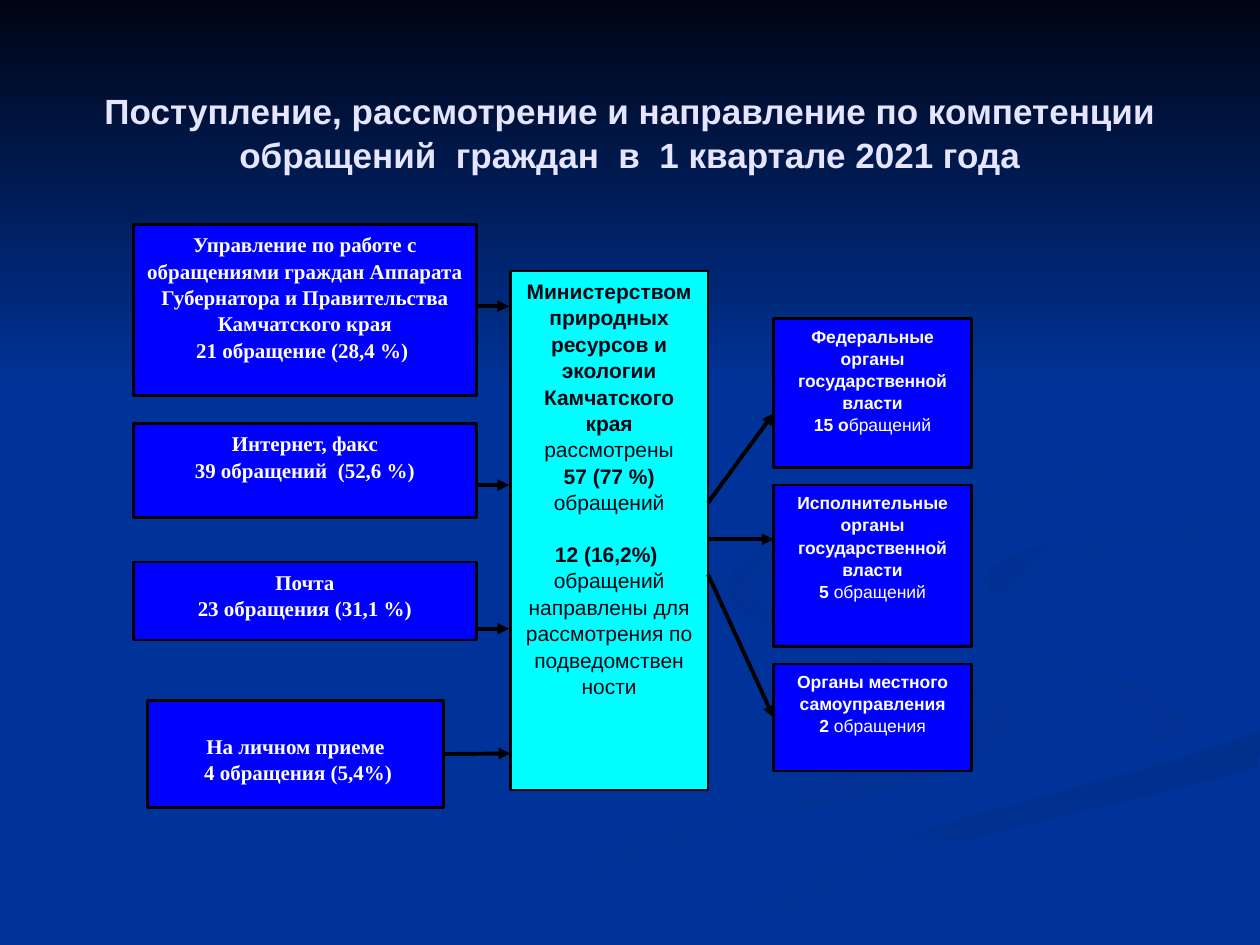
from lxml import etree
from pptx import Presentation
from pptx.dml.color import RGBColor
from pptx.enum.shapes import MSO_CONNECTOR, MSO_SHAPE
from pptx.enum.text import MSO_ANCHOR, MSO_AUTO_SIZE, PP_ALIGN
from pptx.oxml.ns import qn
from pptx.util import Inches, Pt

RECTANGLE = MSO_SHAPE.RECTANGLE
STRAIGHT = MSO_CONNECTOR.STRAIGHT
CENTER = PP_ALIGN.CENTER
TOP, MIDDLE = MSO_ANCHOR.TOP, MSO_ANCHOR.MIDDLE
NO_AUTOFIT = MSO_AUTO_SIZE.NONE
LEFT_SIDE, RIGHT_SIDE = 1, 3

SLIDE_WIDTH, SLIDE_HEIGHT = 10, 7.5
NAVY, NIGHT, BLACK = "003399", "000514", "000000"
BLUE, CYAN, WHITE, LAVENDER = "0000FF", "00FFFF", "FFFFFF", "E5E5FF"
SANS, SERIF = "Arial", "Times New Roman"
LINE_SPACING = 1.05
CURVE_STEPS = 4

# Background ribbons: start colour, end colour, clockwise angle, bends of the outline
RIBBONS = [
    (NAVY, "003193", 0, [
        (7.8, 5.5), (6.8, 5.2), (5.75, 4.6), (5.9, 4.9), (7.3, 5.35), (7.86, 5.65), (6.5, 6.2),
        (4.6, 6.74), (3, 7.49), (3.6, 7.49), (5.3, 6.74), (7.4, 6.18), (8, 5.8)]),
    (NAVY, "003193", 45, [
        (9.43, 5.7), (8.7, 5.3), (7.6, 5), (7.24, 4.64), (7.55, 5.05), (8.7, 5.44),
        (9.17, 5.8), (8.94, 6.05), (9.4, 5.85)]),
    ("002F8C", NAVY, 90, [
        (5.03, 7.49), (5.7, 7.49), (7.2, 6.8), (9.98, 6.09), (9.98, 5.81), (7.6, 6.47),
        (6.3, 6.93)]),
    (NAVY, NAVY, 0, [
        (7.25, 4.64), (7.75, 5.03), (9.05, 5.4), (9.4, 5.8), (7.4, 6.43), (4.77, 7.49),
        (5.2, 7.47), (7, 6.69), (9.99, 5.81), (9.99, 5.38), (8.3, 4.98), (7.8, 4.6),
        (8.35, 4.3), (9.99, 4.02), (9.99, 3.87), (7.9, 4.22)]),
    ("003091", NAVY, 45, [
        (7.81, 4.6), (8.26, 4.96), (8.05, 4.72), (8.4, 4.48), (9.98, 4.2), (9.98, 4.02),
        (8.35, 4.3)]),
    ("002F8E", NAVY, 45, [
        (6.83, 4.3), (8.4, 3.96), (8.94, 3.4), (8.5, 2.8), (7.62, 2.33), (8.6, 2.9),
        (8.89, 3.35), (8.4, 3.78), (6.5, 4.2), (5.77, 4.62), (6.22, 5), (5.93, 4.7),
        (6.2, 4.45)]),
]

# Boxes: top, height, paragraphs; each paragraph is a list of (text, bold) runs
SOURCES = [
    (1.78, 1.36, [[("Управление по работе с обращениями граждан Аппарата Губернатора "
                    "и Правительства Камчатского края", True)],
                  [("21 обращение (28,4 %) ", True)]]),
    (3.36, 0.75, [[("Интернет, факс", True)], [("39 обращений  (52,6 %)", True)]]),
    (4.46, 0.62, [[("Почта", True)], [("23 обращения (31,1 %)", True)]]),
]
PERSONAL_VISIT = [[("На личном приеме", True)], [(" 4 обращения (5,4%)", True)]]
MINISTRY = [
    [("Министерством природных ресурсов и экологии Камчатского края ", True),
     ("рассмотрены", False)],
    [("57 (77 %) ", True), ("обращений", False)],
    [("12 (16,2%) ", True)],
    [("обращений направлены для рассмотрения по подведомствен", False)],
    [("ности", False)],
]
RECIPIENTS = [
    (2.53, 1.18, [[("Федеральные органы государственной власти", True)],
                  [("15 о", True), ("бращений", False)]]),
    (3.85, 1.28, [[("Исполнительные органы государственной власти", True)],
                  [("5 ", True), ("обращений", False)]]),
    (5.27, 0.85, [[("Органы местного самоуправления", True)],
                  [("2 ", True), ("обращения", False)]]),
]


def rgb(color):
    return RGBColor.from_string(color)


def fill_gradient(shape, start, end, angle):
    """Fill without outline; the angle is clockwise in degrees."""
    shape.shadow.inherit = False
    shape.line.fill.background()
    if start == end:
        shape.fill.solid()
        shape.fill.fore_color.rgb = rgb(start)
        return
    shape.fill.gradient()
    shape.fill.gradient_angle = (360 - angle) % 360
    for stop, color in zip(shape.fill.gradient_stops, (start, end)):
        stop.color.rgb = rgb(color)


def spline(a, b, c, d, t):
    """Catmull-Rom value between b and c."""
    return b + t / 2 * (c - a + t * (2 * a - 5 * b + 4 * c - d + t * (3 * (b - c) + d - a)))


def smooth_outline(bends):
    """Points of a closed curve through the bends, kept on the slide."""
    points = []
    for i in range(len(bends)):
        xs, ys = zip(*(bends[(i + k) % len(bends)] for k in (-1, 0, 1, 2)))
        for step in range(CURVE_STEPS):
            t = step / CURVE_STEPS
            points.append((Inches(min(spline(*xs, t), SLIDE_WIDTH)),
                           Inches(min(spline(*ys, t), SLIDE_HEIGHT))))
    return points


def add_ribbon(slide, start, end, angle, bends):
    first, *rest = smooth_outline(bends)
    builder = slide.shapes.build_freeform(*first)
    builder.add_line_segments(rest, close=True)
    fill_gradient(builder.convert_to_shape(), start, end, angle)


def add_backdrop(slide):
    slide.background.fill.solid()
    slide.background.fill.fore_color.rgb = rgb(NAVY)
    for ribbon in RIBBONS:
        add_ribbon(slide, *ribbon)
    sky = slide.shapes.add_shape(RECTANGLE, 0, 0, Inches(SLIDE_WIDTH), Inches(3.08))
    fill_gradient(sky, NIGHT, NAVY, 90)


def write_paragraph(paragraph, runs, font, size, color):
    paragraph.alignment = CENTER
    paragraph.line_spacing = LINE_SPACING
    for text, bold in runs:
        run = paragraph.add_run()
        run.text = text
        run.font.name, run.font.size, run.font.bold = font, Pt(size), bold
        run.font.color.rgb = rgb(color)


def add_title(slide, text):
    title = slide.shapes.title
    title.left, title.top = Inches(0.5), Inches(0.3)
    title.width, title.height = Inches(9), Inches(1.48)
    frame = title.text_frame
    frame.auto_size, frame.vertical_anchor = NO_AUTOFIT, MIDDLE
    write_paragraph(frame.paragraphs[0], [(text, True)], SANS, 20, LAVENDER)
    # The placeholder comes first in the tree, so lift it above the backdrop
    title.element.getparent().append(title.element)


def add_box(slide, left, top, width, height, paragraphs, font, size=12, fill=BLUE, color=WHITE):
    box = slide.shapes.add_shape(RECTANGLE, *map(Inches, (left, top, width, height)))
    box.shadow.inherit = False
    box.fill.solid()
    box.fill.fore_color.rgb = rgb(fill)
    box.line.color.rgb, box.line.width = rgb(BLACK), Pt(1.5)
    frame = box.text_frame
    frame.word_wrap, frame.vertical_anchor = True, TOP
    for index, runs in enumerate(paragraphs):
        paragraph = frame.add_paragraph() if index else frame.paragraphs[0]
        write_paragraph(paragraph, runs, font, size, color)
    return box


def add_arrow(slide, x1, y1, x2, y2):
    arrow = slide.shapes.add_connector(STRAIGHT, *map(Inches, (x1, y1, x2, y2)))
    arrow.line.color.rgb, arrow.line.width = rgb(BLACK), Pt(2.25)
    properties = arrow.element.spPr
    etree.SubElement(properties.find(qn("a:ln")), qn("a:tailEnd"), type="triangle")
    etree.SubElement(properties, qn("a:effectLst"))
    return arrow


def main():
    prs = Presentation()
    prs.slide_width, prs.slide_height = Inches(SLIDE_WIDTH), Inches(SLIDE_HEIGHT)
    slide = prs.slides.add_slide(prs.slide_layouts[5])
    add_backdrop(slide)
    add_title(slide, "Поступление, рассмотрение и направление по компетенции "
                     "обращений  граждан  в  1 квартале 2021 года")

    visit = add_box(slide, 1.17, 5.56, 2.35, 0.85, PERSONAL_VISIT, SERIF)
    visit.text_frame.margin_top = Inches(0.25)
    ministry = add_box(slide, 4.05, 2.15, 1.57, 4.12, MINISTRY, SANS, fill=CYAN, color=NIGHT)
    ministry.text_frame.paragraphs[2].space_before = Pt(14.4)

    # Arrows start beneath the source boxes, which are drawn over them
    for y in (2.43, 3.85, 4.99):
        add_arrow(slide, 3.51, y, 4.04, y)
    add_arrow(slide, 3.52, 5.98, 4.05, 5.98).begin_connect(visit, RIGHT_SIDE)
    for top, height, paragraphs in SOURCES:
        add_box(slide, 1.06, top, 2.72, height, paragraphs, SERIF)

    for top, height, paragraphs in RECIPIENTS:
        recipient = add_box(slide, 6.14, top, 1.57, height, paragraphs, SANS, size=10)
    for start_y, end_y in ((3.99, 3.28), (4.28, 4.28), (4.56, 5.7)):
        arrow = add_arrow(slide, 5.62, start_y, 6.14, end_y)
    arrow.end_connect(recipient, LEFT_SIDE)

    prs.save("out.pptx")


if __name__ == "__main__":
    main()
